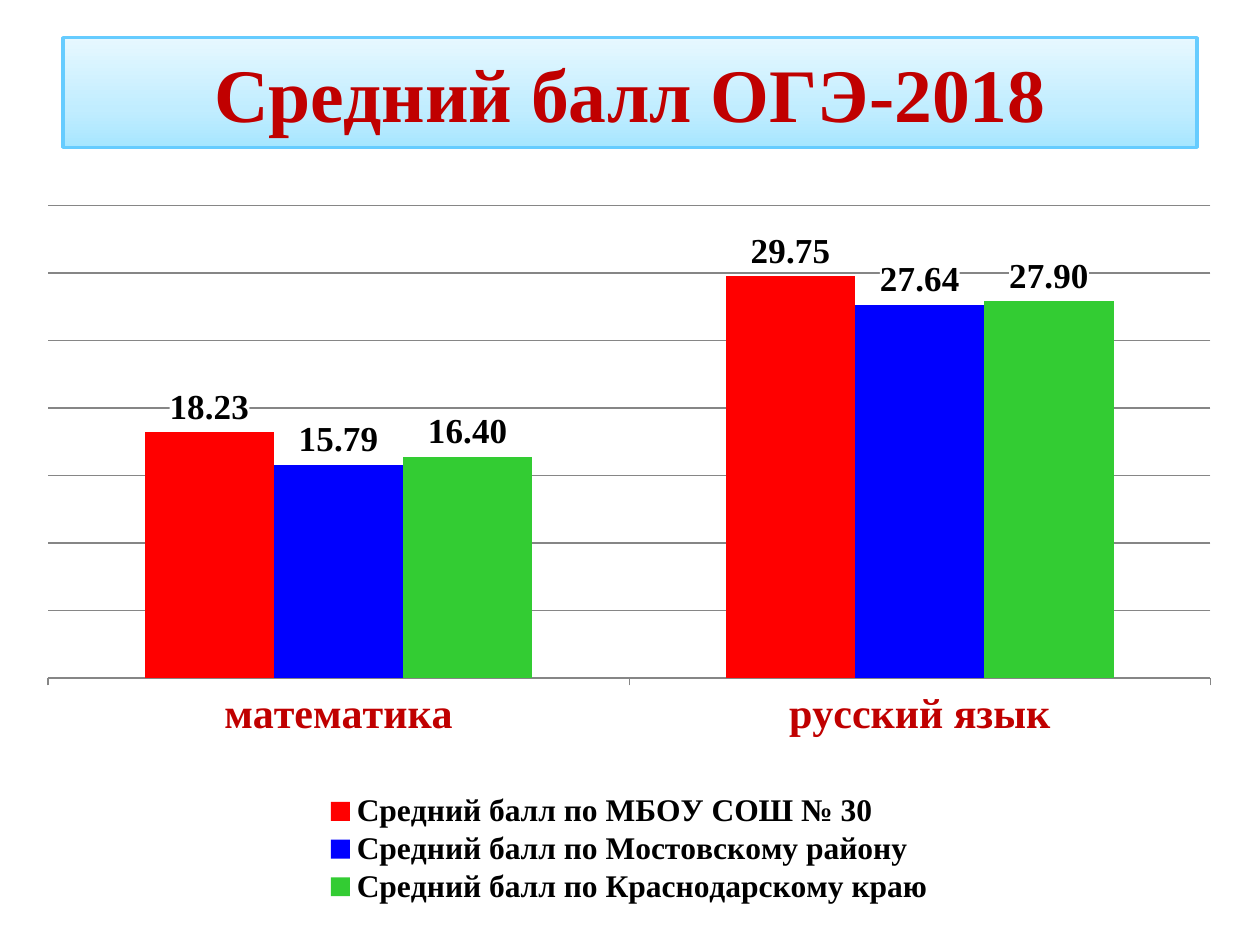
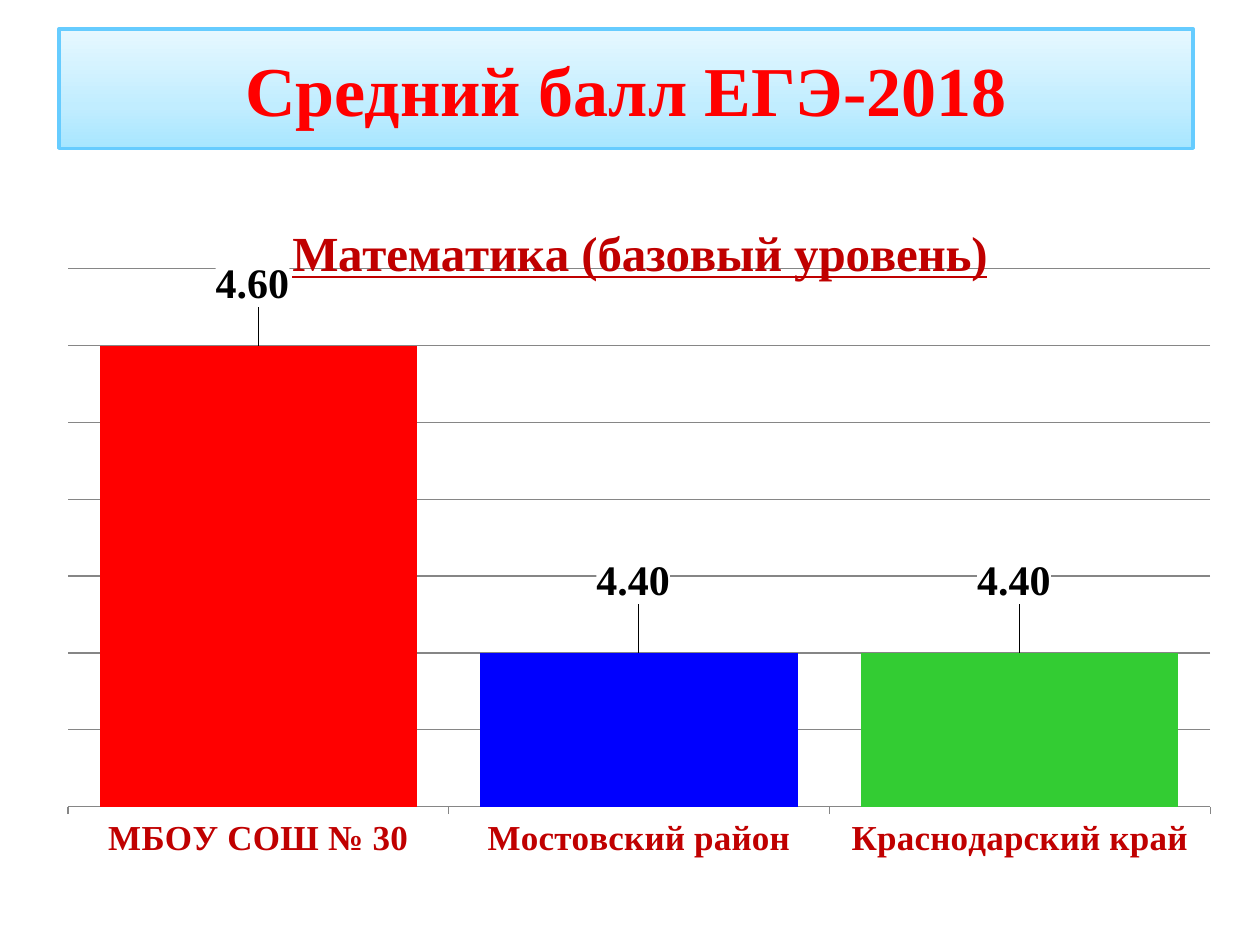
from copy import deepcopy

from pptx import Presentation
from pptx import util as u
from pptx.chart.data import CategoryChartData
from pptx.dml.color import RGBColor
from pptx.enum import chart as ch
from pptx.enum import text
from pptx.oxml import parse_xml
from pptx.oxml.ns import nsdecls, qn

FONT = "Times New Roman"
RED, BLUE, GREEN = "FF0000", "0000FF", "33CC33"
DARK_RED, BLACK, GRAY = "C00000", "000000", "868686"
BORDER = "66CCFF"
BAND_STOPS = [(0, "A7E6FF"), (35, "C1EDFF"), (100, "E7F8FF")]
TITLE_ONLY = 5


def rgb(value):
    return RGBColor.from_string(value)


def style_font(font, size, color=BLACK):
    font.name, font.size, font.bold = FONT, u.Pt(size), True
    font.color.rgb = rgb(color)


def add_title(slide, caption, place, size, color):
    """Fill the title placeholder and draw it as a gradient band."""
    title = slide.shapes.title
    title.left, title.top, title.width, title.height = map(u.Cm, place)
    stops = "".join(
        f'<a:gs pos="{position * 1000}"><a:srgbClr val="{shade}"/></a:gs>'
        for position, shade in BAND_STOPS)
    outline = parse_xml(
        f'<a:prstGeom {nsdecls("a")} prst="roundRect"><a:avLst>'
        '<a:gd name="adj" fmla="val 2000"/></a:avLst></a:prstGeom>')
    gradient = parse_xml(
        f'<a:gradFill {nsdecls("a")} rotWithShape="1"><a:gsLst>{stops}</a:gsLst>'
        '<a:lin ang="16200000" scaled="1"/></a:gradFill>')
    title.element.spPr.extend([outline, gradient])
    title.line.color.rgb = rgb(BORDER)
    title.line.width = u.Pt(2)

    frame = title.text_frame
    frame.text = caption
    frame.auto_size = text.MSO_AUTO_SIZE.NONE
    frame.vertical_anchor = text.MSO_ANCHOR.MIDDLE
    para = frame.paragraphs[0]
    para.alignment = text.PP_ALIGN.CENTER
    style_font(para.runs[0].font, size, color)


def manual_layout(x, y, width=None, height=None, inner=False, edge=True):
    """Layout in fractions of the chart; edge=False makes x and y offsets."""
    parts = [("layoutTarget", "inner")] if inner else []
    if edge:
        parts += [("xMode", "edge"), ("yMode", "edge")]
    parts += [("x", x), ("y", y)]
    if width:
        parts += [("w", width), ("h", height)]
    body = "".join(f'<c:{tag} val="{value}"/>' for tag, value in parts)
    return parse_xml(f'<c:layout {nsdecls("c")}><c:manualLayout>{body}'
                     '</c:manualLayout></c:layout>')


def place_part(chart, name, after, layout):
    """Set the layout of a chart part, behind its child `after` if one is named."""
    part = chart.element.xpath(f".//c:{name}")[0]
    for old in part.findall(qn("c:layout")):
        part.remove(old)
    if after:
        part.find(qn(after)).addnext(layout)
    else:
        part.insert(0, layout)


def label_series(series, size):
    labels = series.data_labels
    labels.show_value = True
    labels.number_format = "0.00"
    labels.number_format_is_linked = False
    labels.position = ch.XL_LABEL_POSITION.OUTSIDE_END
    style_font(labels.font, size)


def whiten_labels(chart):
    """Give the value labels a white ground that interrupts the gridlines."""
    for number_format in chart.element.xpath(".//c:dLbls/c:numFmt"):
        number_format.addnext(parse_xml(
            f'<c:spPr {nsdecls("c", "a")}><a:solidFill>'
            '<a:srgbClr val="FFFFFF"/></a:solidFill></c:spPr>'))


def shift_labels(chart, series, offsets):
    for index, offset in enumerate(offsets):
        series.points[index].data_label.position = ch.XL_LABEL_POSITION.OUTSIDE_END
    group = chart.element.xpath(".//c:ser/c:dLbls")[0]
    for label, offset in zip(group.findall(qn("c:dLbl")), offsets):
        shared = [deepcopy(group.find(qn(tag)))
                  for tag in ("c:numFmt", "c:spPr", "c:txPr")]
        for old in label.findall(qn("c:txPr")) + label.findall(qn("c:spPr")):
            label.remove(old)
        previous = label.find(qn("c:idx"))
        for part in [manual_layout(*offset, edge=False)] + shared:
            previous.addnext(part)
            previous = part


def add_column_chart(slide, place, categories, rows, scale, plot_box,
                     axis_size, label_size, gap):
    data = CategoryChartData(number_format="0.00")
    data.categories = categories
    for name, values in rows:
        data.add_series(name, values)
    chart = slide.shapes.add_chart(
        ch.XL_CHART_TYPE.COLUMN_CLUSTERED, *map(u.Cm, place), data).chart
    chart.has_title = chart.has_legend = False
    chart.font.name, chart.font.size = "Calibri", u.Pt(10)
    place_part(chart, "plotArea", None, manual_layout(*plot_box, inner=True))

    plot = chart.plots[0]
    plot.gap_width, plot.overlap, plot.vary_by_categories = gap, 0, False
    for series, color in zip(plot.series, (RED, BLUE, GREEN)):
        series.format.fill.solid()
        series.format.fill.fore_color.rgb = rgb(color)
        label_series(series, label_size)
    whiten_labels(chart)

    category_axis, value_axis = chart.category_axis, chart.value_axis
    category_axis.major_tick_mark = ch.XL_TICK_MARK.OUTSIDE
    category_axis.format.line.color.rgb = rgb(GRAY)
    style_font(category_axis.tick_labels.font, axis_size, DARK_RED)
    value_axis.minimum_scale, value_axis.maximum_scale, value_axis.major_unit = scale
    value_axis.has_major_gridlines = True
    value_axis.major_gridlines.format.line.color.rgb = rgb(GRAY)
    value_axis.tick_labels.number_format = "0.00"
    value_axis.tick_labels.number_format_is_linked = False
    value_axis.visible = False
    return chart


def add_legend(chart, size, box):
    chart.has_legend = True
    chart.legend.position = ch.XL_LEGEND_POSITION.BOTTOM
    chart.legend.include_in_layout = False
    style_font(chart.legend.font, size)
    place_part(chart, "legend", "c:legendPos", manual_layout(*box))


def add_chart_title(chart, caption, size, corner):
    frame = chart.chart_title.text_frame
    frame.text = caption
    font = frame.paragraphs[0].runs[0].font
    style_font(font, size, DARK_RED)
    font.underline = True
    place_part(chart, "title", "c:tx", manual_layout(*corner))


def build_oge_slide(deck):
    slide = deck.slides.add_slide(deck.slide_layouts[TITLE_ONLY])
    add_title(slide, "Средний балл ОГЭ-2018", (1.27, 0.76, 22.86, 2.21), 43.2, DARK_RED)
    chart = add_column_chart(
        slide, (0.58, 3.76, 24.21, 14.68), ["математика", "русский язык"],
        [("Средний балл по МБОУ СОШ № 30", (18.23, 29.75)),
         ("Средний балл по Мостовскому району", (15.79, 27.64)),
         ("Средний балл по Краснодарскому краю", (16.4, 27.9))],
        scale=(0, 35, 5), plot_box=(0.016, 0.026, 0.968, 0.649),
        axis_size=24, label_size=20, gap=150)
    add_legend(chart, 18, (0.24, 0.83, 0.52, 0.16))


def build_ege_slide(deck):
    slide = deck.slides.add_slide(deck.slide_layouts[TITLE_ONLY])
    add_title(slide, "Средний балл ЕГЭ-2018", (1.19, 0.58, 22.86, 2.41), 40, RED)
    chart = add_column_chart(
        slide, (0.99, 3.58, 23.62, 14.48),
        ["МБОУ СОШ № 30", "Мостовский район", "Краснодарский край"],
        [("Средний балл", (4.6, 4.4, 4.4))],
        scale=(4.3, 4.65, 0.05), plot_box=(0.016, 0.127, 0.975, 0.749),
        axis_size=20, label_size=24, gap=20)
    add_chart_title(chart, "Математика (базовый уровень)", 28, (0.2, 0.05))
    series = chart.plots[0].series[0]
    for index, color in enumerate((RED, BLUE, GREEN)):
        fill = series.points[index].format.fill
        fill.solid()
        fill.fore_color.rgb = rgb(color)
    shift_labels(chart, series, [(-0.005, -0.046), (-0.005, -0.06), (-0.005, -0.06)])


def main():
    deck = Presentation()
    deck.slide_width, deck.slide_height = u.Cm(25.4), u.Cm(19.05)
    build_oge_slide(deck)
    build_ege_slide(deck)
    deck.save("out.pptx")


if __name__ == "__main__":
    main()
